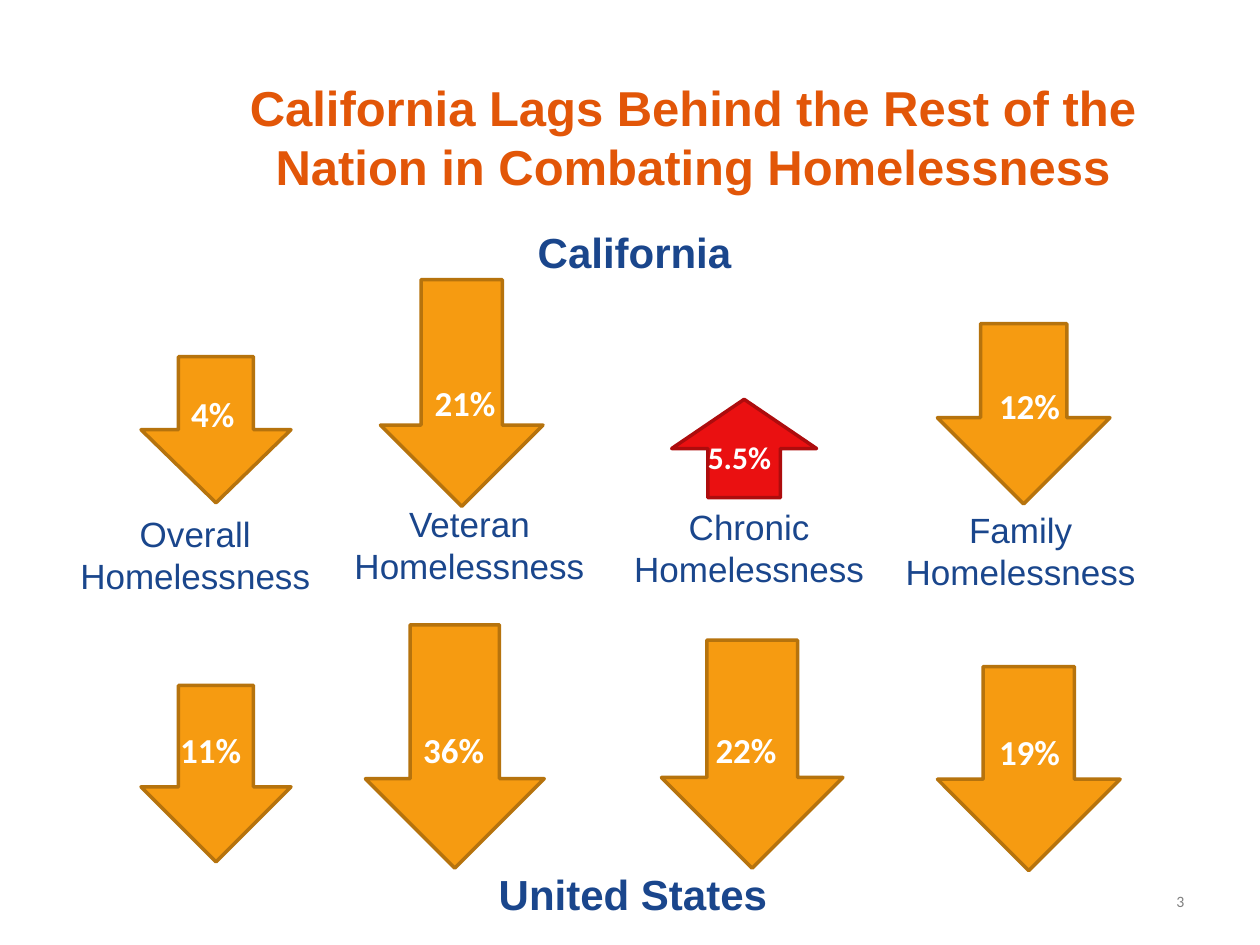
from dataclasses import dataclass

from pptx import Presentation
from pptx import util as u
from pptx.dml.color import RGBColor
from pptx.enum import shapes, text


@dataclass(frozen=True)
class Theme:
    title: str = "E25608"
    label: str = "1A468C"
    value: str = "FFFFFF"
    number: str = "808080"
    down: tuple = ("F69B11", "B6730D")  # fill, line
    up: tuple = ("EA1011", "AD0C0D")
    head_font: str = "Arial"
    value_font: str = "Calibri"
    title_size: int = 28
    heading_size: int = 24
    body_size: int = 20
    small_size: int = 18
    number_size: int = 9


def write(tf, words, *, size, color, font, bold=False,
          align=text.PP_ALIGN.LEFT, anchor=text.MSO_ANCHOR.TOP):
    tf.word_wrap = True
    tf.vertical_anchor = anchor
    p = tf.paragraphs[0]
    p.alignment = align
    r = p.add_run()
    r.text = words
    r.font.name, r.font.size, r.font.bold = font, u.Pt(size), bold
    r.font.color.rgb = RGBColor.from_string(color)


class Builder:
    def __init__(self, slide, theme):
        self.s, self.t = slide, theme

    def title(self, words, *box):
        sp = self.s.shapes.title
        sp.left, sp.top, sp.width, sp.height = map(u.Pt, box)
        tf = sp.text_frame
        tf.margin_left = tf.margin_right = tf.margin_top = tf.margin_bottom = 0
        write(tf, words, size=self.t.title_size, color=self.t.title,
              font=self.t.head_font, bold=True, align=text.PP_ALIGN.CENTER,
              anchor=text.MSO_ANCHOR.MIDDLE)
        tf.auto_size = text.MSO_AUTO_SIZE.NONE

    def box(self, words, *box, **style):
        sp = self.s.shapes.add_textbox(*map(u.Pt, box))
        write(sp.text_frame, words, **style)

    def heading(self, words, *box):
        self.box(words, *box, size=self.t.heading_size, color=self.t.label,
                 font=self.t.head_font, bold=True)

    def label(self, words, left, top, width):
        self.box(words, left, top, width, 55.4, size=self.t.body_size,
                 color=self.t.label, font=self.t.head_font,
                 align=text.PP_ALIGN.CENTER)

    def value(self, words, left, top, width, size):
        self.box(words, left, top, width, size * 1.6, size=size,
                 color=self.t.value, font=self.t.value_font, bold=True)

    def arrow(self, *box, rising=False):
        sp = self.s.shapes.add_shape(shapes.MSO_SHAPE.DOWN_ARROW, *map(u.Pt, box))
        sp.shadow.inherit = False
        fill, line = self.t.up if rising else self.t.down
        sp.fill.solid()
        sp.fill.fore_color.rgb = RGBColor.from_string(fill)
        sp.line.color.rgb = RGBColor.from_string(line)
        sp.line.width = u.Pt(2)
        sp.rotation = 180 if rising else 0


# Per group: label box, then (arrow box, value, value box) for each region
GROUPS = [
    ("Overall", (36, 289.4, 151.2),
     ((80.6, 203.8, 85.7, 83.5), "4%", (102.2, 221, 59)),
     ((80.6, 391.7, 85.7, 100.8), "11%", (95.8, 412.6, 59))),
    ("Veteran", (182.2, 283.7, 172.1),
     ((217.4, 159.8, 92.9, 129.6), "21%", (241.2, 214.6, 59)),
     ((208.8, 357.1, 102.2, 139), "36%", (234.7, 412.6, 59))),
    ("Chronic", (355, 285.1, 146.2),
     ((383.8, 228.2, 82.8, 56.2), "5.5%", (397.4, 247, 64.8)),
     ((378, 365.8, 103.7, 130.3), "22%", (401.8, 412.6, 64.8))),
    ("Family", (509.8, 287.3, 146.9),
     ((535.7, 185, 98.6, 103), "12%", (563.8, 216, 60.5)),
     ((535.7, 380.9, 104.4, 116.6), "19%", (563.8, 414, 60.5))),
]
RISING = "5.5%"


def main():
    prs = Presentation()
    prs.slide_width, prs.slide_height = u.Pt(720), u.Pt(540)
    theme = Theme()
    b = Builder(prs.slides.add_slide(prs.slide_layouts[5]), theme)

    # Title and region headings
    b.title("California Lags Behind the Rest of the Nation in Combating Homelessness",
            138, 36, 516, 84)
    b.heading("California", 300.2, 126, 133.9, 36)
    b.heading("United States", 277.9, 492.5, 197.3, 36)

    # Arrows with their values, California above and United States below
    for name, label_box, *regions in GROUPS:
        for arrow_box, value, value_box in regions:
            rising = value == RISING
            b.arrow(*arrow_box, rising=rising)
            b.value(value, *value_box,
                    theme.small_size if rising else theme.body_size)
        b.label(f"{name} Homelessness", *label_box)

    # Slide number
    b.box("3", 516, 500.4, 167.8, 28.8, size=theme.number_size,
          color=theme.number, font=theme.value_font,
          align=text.PP_ALIGN.RIGHT, anchor=text.MSO_ANCHOR.MIDDLE)

    prs.save("out.pptx")


if __name__ == "__main__":
    main()
